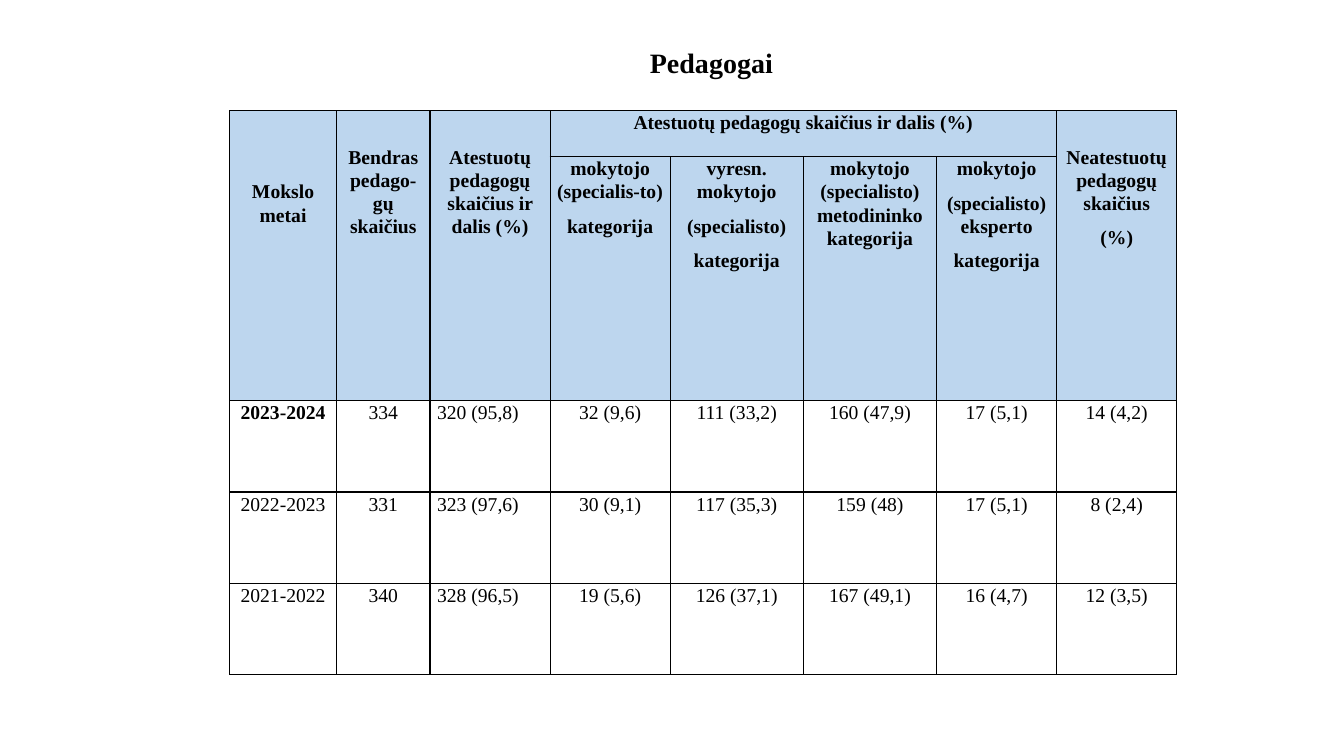
from dataclasses import dataclass

from lxml import etree
from pptx import Presentation
from pptx import util as u
from pptx.dml import color
from pptx.enum import text
from pptx.oxml import ns


@dataclass(frozen=True)
class Theme:
    ink: str = "000000"
    header_fill: str = "BDD6EE"
    body_fill: str = "FFFFFF"
    font: str = "Times New Roman"
    title_size: float = 20
    table_size: float = 14
    border_width: float = 1


def apply_format(target, values):
    for name, value in values.items():
        setattr(target, name, value)


class SlideBuilder:
    def __init__(self, presentation, theme):
        self.theme = theme
        self.slide = presentation.slides.add_slide(presentation.slide_layouts[5])

    def format_font(self, paragraph, size, bold):
        values = {"name": self.theme.font, "size": u.Pt(size), "bold": bold}
        for run in paragraph.runs:
            apply_format(run.font, values)
            run.font.color.rgb = color.RGBColor.from_string(self.theme.ink)

    def title(self, wording, left, top, width, height):
        shape = self.slide.shapes.title
        apply_format(shape, {
            "left": u.Pt(left), "top": u.Pt(top),
            "width": u.Pt(width), "height": u.Pt(height),
        })
        frame = shape.text_frame
        frame.text = wording
        apply_format(frame, {
            "word_wrap": True,
            "vertical_anchor": text.MSO_ANCHOR.TOP,
            "auto_size": text.MSO_AUTO_SIZE.SHAPE_TO_FIT_TEXT,
        })
        paragraph = frame.paragraphs[0]
        paragraph.alignment = text.PP_ALIGN.LEFT
        self.format_font(paragraph, self.theme.title_size, True)

    def table(self, left, top, widths, heights):
        frame = self.slide.shapes.add_table(
            len(heights), len(widths), u.Pt(left), u.Pt(top),
            u.Pt(sum(widths)), u.Pt(sum(heights)))
        table = frame.table
        apply_format(table, {"first_row": False, "horz_banding": False})
        for column, width in zip(table.columns, widths):
            column.width = u.Pt(width)
        for row, height in zip(table.rows, heights):
            row.height = u.Pt(height)
        return table

    def cell(self, cell, fill):
        cell.fill.solid()
        cell.fill.fore_color.rgb = color.RGBColor.from_string(fill)
        properties = cell._tc.get_or_add_tcPr()
        for index, side in enumerate(("lnL", "lnR", "lnT", "lnB")):
            line = etree.Element(ns.qn("a:" + side), w=str(u.Pt(self.theme.border_width)))
            solid = etree.SubElement(line, ns.qn("a:solidFill"))
            etree.SubElement(solid, ns.qn("a:srgbClr"), val=self.theme.ink)
            properties.insert(index, line)

    def cell_text(self, cell, wording, bold, alignment=text.PP_ALIGN.CENTER, top=0):
        apply_format(cell, {
            "margin_left": u.Pt(5), "margin_right": u.Pt(5),
            "margin_top": u.Pt(top), "margin_bottom": 0,
            "vertical_anchor": text.MSO_ANCHOR.TOP,
        })
        cell.text_frame.text = wording
        for paragraph in cell.text_frame.paragraphs:
            apply_format(paragraph, {
                "alignment": alignment, "line_spacing": 1.07, "space_after": u.Pt(8),
            })
            self.format_font(paragraph, self.theme.table_size, bold)


COLUMN_WIDTHS = [76.4, 66.8, 85.8, 85.7, 95.2, 95.2, 85.8, 85.7]
ROW_HEIGHTS = [33, 174.2] + [65.3] * 3
ATTESTED = "Atestuotų pedagogų skaičius ir dalis (%)"
TALL_HEADERS = {
    0: ("Mokslo metai", 49.6),
    1: ("Bendras pedago-gų skaičius", 24.8),
    2: (ATTESTED, 24.8),
    7: ("Neatestuotų pedagogų skaičius\n(%)", 24.8),
}
CATEGORIES = [
    "mokytojo (specialis-to)\nkategorija",
    "vyresn. mokytojo\n(specialisto)\nkategorija",
    "mokytojo (specialisto) metodininko kategorija",
    "mokytojo\n(specialisto) eksperto\nkategorija",
]
FIRST_CATEGORY = 3
ATTESTED_COLUMN = 2
YEARS = [
    ["2023-2024", "334", "320 (95,8)", "32 (9,6)", "111 (33,2)", "160 (47,9)", "17 (5,1)", "14 (4,2)"],
    ["2022-2023", "331", "323 (97,6)", "30 (9,1)", "117 (35,3)", "159 (48)", "17 (5,1)", "8 (2,4)"],
    ["2021-2022", "340", "328 (96,5)", "19 (5,6)", "126 (37,1)", "167 (49,1)", "16 (4,7)", "12 (3,5)"],
]


def main():
    presentation = Presentation()
    apply_format(presentation, {"slide_width": u.Pt(960), "slide_height": u.Pt(540)})
    theme = Theme()
    builder = SlideBuilder(presentation, theme)
    builder.title("Pedagogai", 457, 29, 113, 31.5)

    table = builder.table(164, 79, COLUMN_WIDTHS, ROW_HEIGHTS)
    for row in range(len(ROW_HEIGHTS)):
        for column in range(len(COLUMN_WIDTHS)):
            fill = theme.header_fill if row < 2 else theme.body_fill
            builder.cell(table.cell(row, column), fill)

    for column, (wording, top) in TALL_HEADERS.items():
        table.cell(0, column).merge(table.cell(1, column))
        builder.cell_text(table.cell(0, column), wording, True, top=top)

    last_category = FIRST_CATEGORY + len(CATEGORIES) - 1
    table.cell(0, FIRST_CATEGORY).merge(table.cell(0, last_category))
    builder.cell_text(table.cell(0, FIRST_CATEGORY), ATTESTED, True)
    for column, wording in enumerate(CATEGORIES, FIRST_CATEGORY):
        builder.cell_text(table.cell(1, column), wording, True)

    for row, year in enumerate(YEARS, 2):
        for column, wording in enumerate(year):
            alignment = text.PP_ALIGN.LEFT if column == ATTESTED_COLUMN else text.PP_ALIGN.CENTER
            builder.cell_text(table.cell(row, column), wording, (row, column) == (2, 0), alignment)

    presentation.save("out.pptx")


if __name__ == "__main__":
    main()
